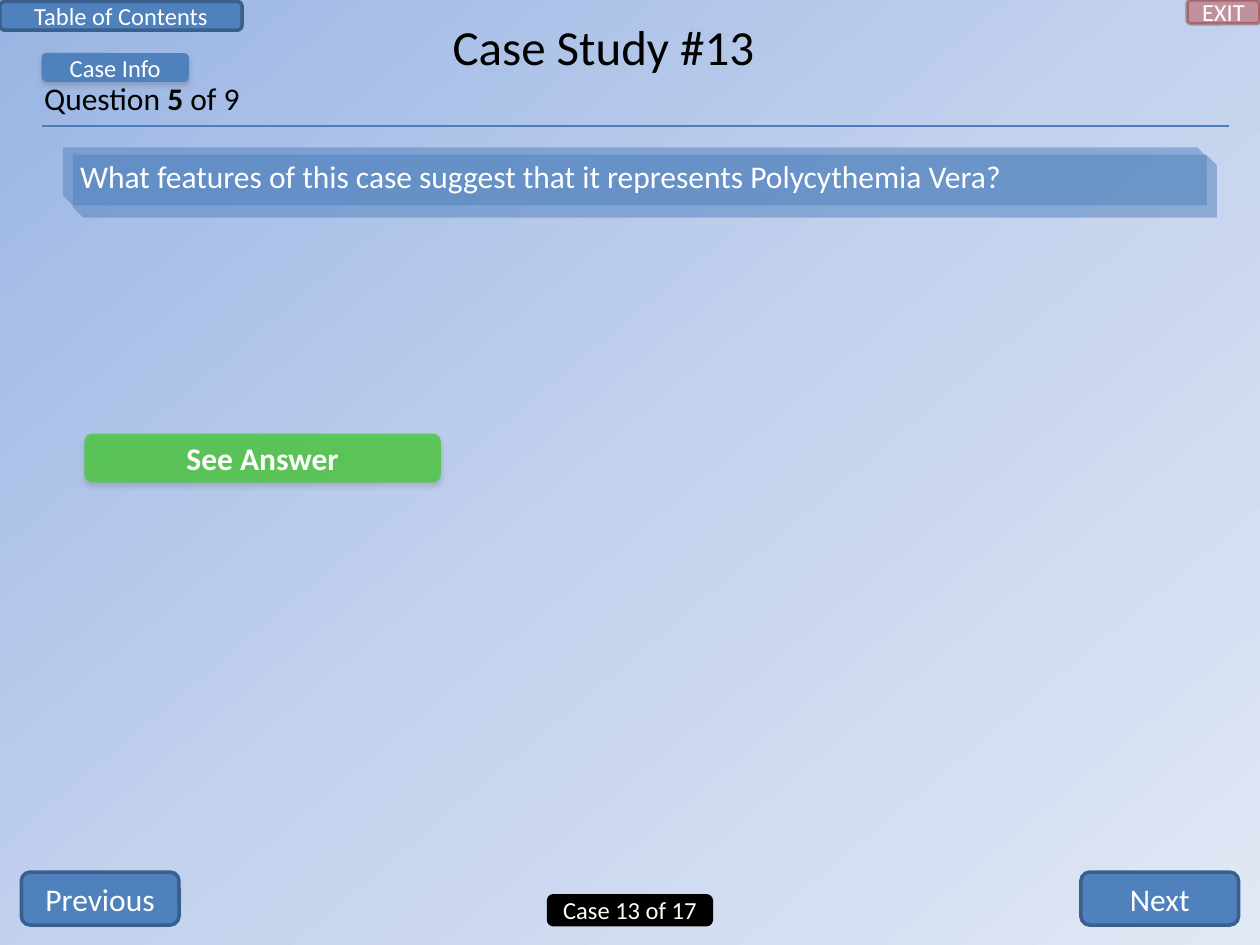
from pptx import Presentation
from pptx.dml.color import RGBColor
from pptx.enum.shapes import MSO_CONNECTOR, MSO_SHAPE as Preset
from pptx.enum.text import MSO_ANCHOR as Anchor, PP_ALIGN as Align
from pptx.oxml import parse_xml
from pptx.oxml.ns import nsdecls
from pptx.util import Cm, Pt
from lxml.etree import SubElement

A = "{http://schemas.openxmlformats.org/drawingml/2006/main}"
SLIDE_W, SLIDE_H = 25.4, 19.05
BLUE, DARK_BLUE, WHITE, BLACK = "4F81BD", "3A5F8C", "FFFFFF", "000000"


def colour(hex_value):
    return RGBColor.from_string(hex_value)


def cm_box(box):
    return [Cm(length) for length in box]


def set_alpha(fill_parent, percent):
    rgb = next(fill_parent.iter(A + "srgbClr"))
    SubElement(rgb, A + "alpha", val=str(percent * 1000))


def add_soft_shadow(shape):
    shape._element.spPr.append(parse_xml(
        f'<a:effectLst {nsdecls("a")}>'
        '<a:outerShdw blurRad="39370" dist="22860" dir="5400000" rotWithShape="0">'
        '<a:srgbClr val="000000"><a:alpha val="16000"/></a:srgbClr>'
        '</a:outerShdw></a:effectLst>'))


def write(frame, runs, size, ink, align=Align.LEFT, anchor=Anchor.MIDDLE, wrap=True):
    """Fill a text frame with one paragraph of (text, bold) runs."""
    for name, value in {"word_wrap": wrap, "vertical_anchor": anchor}.items():
        setattr(frame, name, value)
    paragraph = frame.paragraphs[0]
    paragraph.alignment = align
    for text, bold in runs:
        run = paragraph.add_run()
        run.text = text
        for name, value in {"name": "Calibri", "size": Pt(size), "bold": bold}.items():
            setattr(run.font, name, value)
        run.font.color.rgb = colour(ink)


def add_panel(slide, preset, box, fill, alpha=None, line=None):
    panel = slide.shapes.add_shape(preset, *cm_box(box))
    panel.fill.solid()
    panel.fill.fore_color.rgb = colour(fill)
    if alpha:
        set_alpha(panel._element.spPr.find(A + "solidFill"), alpha)
    if line:
        panel.line.color.rgb = colour(line)
        panel.line.width = Pt(2)
    else:
        panel.line.fill.background()
    return panel


def add_button(slide, box, label, size, fill=BLUE, line=None, alpha=None, bold=False):
    """Add a rounded button; one without an outline gets a soft shadow."""
    button = add_panel(slide, Preset.ROUNDED_RECTANGLE, box, fill, alpha, line)
    if line:
        button.shadow.inherit = False
    else:
        add_soft_shadow(button)
    write(button.text_frame, [(label, bold)], size, WHITE, Align.CENTER)
    return button


def set_background(slide):
    stops = "".join(f'<a:gs pos="{pos * 1000}"><a:srgbClr val="{rgb}"/></a:gs>'
                    for pos, rgb in ((0, "9AB5E4"), (50, "C2D1ED"), (100, "E1E8F5")))
    slide._element.cSld.insert(0, parse_xml(
        f'<p:bg {nsdecls("p", "a")}><p:bgPr><a:gradFill rotWithShape="1">'
        f'<a:gsLst>{stops}</a:gsLst><a:lin ang="{50 * 60000}" scaled="0"/>'
        '</a:gradFill><a:effectLst/></p:bgPr></p:bg>'))


def add_header(slide, left, top, width, height):
    """Place the title, the question counter and the rule that closes the header."""
    title = slide.shapes.title
    place = dict(zip(("left", "top", "width", "height"),
                     cm_box((left + 5.71, top + 0.2, 11.23, 1.45))))
    for name, value in place.items():
        setattr(title, name, value)
    write(title.text_frame, [("Case Study #13", False)], 28, BLACK, Align.CENTER)

    counter = slide.shapes.add_textbox(*cm_box((left - 0.2, top + 1.47, 4.5, 1.8)))
    write(counter.text_frame, [("Question ", False), ("5 ", True), ("of 9", False)],
          18, BLACK, anchor=Anchor.TOP, wrap=False)

    bottom = top + height
    rule = slide.shapes.add_connector(
        MSO_CONNECTOR.STRAIGHT, *cm_box((left, bottom, left + width, bottom)))
    rule.line.color.rgb = colour("4B7EBC")
    rule.line.width = Pt(1.25)
    SubElement(rule._element.spPr, A + "effectLst")
    add_button(slide, (left, top + 1.07, 2.97, 0.58), "Case Info", 14)


def add_question(slide, left, top, width, height):
    """Place the question on two offset translucent panels."""
    back = (left + 0.2, top + 0.15, width, height + 0.1)
    front = (left, top, width, height)
    for box in (back, front):
        panel = add_panel(slide, Preset.SNIP_2_DIAG_RECTANGLE, box, BLUE, alpha=50)
        panel.shadow.inherit = False
    write(panel.text_frame,
          [("What features of this case suggest that it represents Polycythemia Vera?",
            False)], 18, WHITE)


def add_corner_buttons(slide, left, top, width):
    add_button(slide, (left, top + 0.03, 4.88, 0.58), "Table of Contents", 14,
               line=DARK_BLUE)
    exit_w = 1.47
    exit_button = add_button(slide, (left + width - exit_w, top, exit_w, 0.48), "EXIT",
                             14, fill="C0504D", line="8E3B39", alpha=50)
    set_alpha(exit_button.line._ln, 50)


def add_footer(slide, left, top, width, height):
    """Place Previous and Next at the ends and the case counter in the middle."""
    step_w, counter_w = 3.18, 3.28
    for x, label in ((left, "Previous"), (left + width - step_w, "Next")):
        add_button(slide, (x, top, step_w, height), label, 18, line=DARK_BLUE)
    add_button(slide, (left + (width - counter_w) / 2, top + 0.48, counter_w, 0.58),
               "Case 13 of 17", 14, fill=BLACK, line=BLACK)


def main():
    deck = Presentation()
    deck.slide_width, deck.slide_height = Cm(SLIDE_W), Cm(SLIDE_H)
    slide = deck.slides.add_slide(deck.slide_layouts[5])
    set_background(slide)
    add_header(slide, 0.84, 0, 23.93, 2.54)
    add_question(slide, 1.27, 2.97, 23.06, 1.17)
    add_button(slide, (1.7, 8.74, 7.19, 0.99), "See Answer", 18, fill="48C937",
               alpha=78, bold=True)
    add_footer(slide, 0.43, 17.58, SLIDE_W - 2 * 0.43, 1.07)
    add_corner_buttons(slide, 0, 0, SLIDE_W)
    deck.save("out.pptx")


if __name__ == "__main__":
    main()
